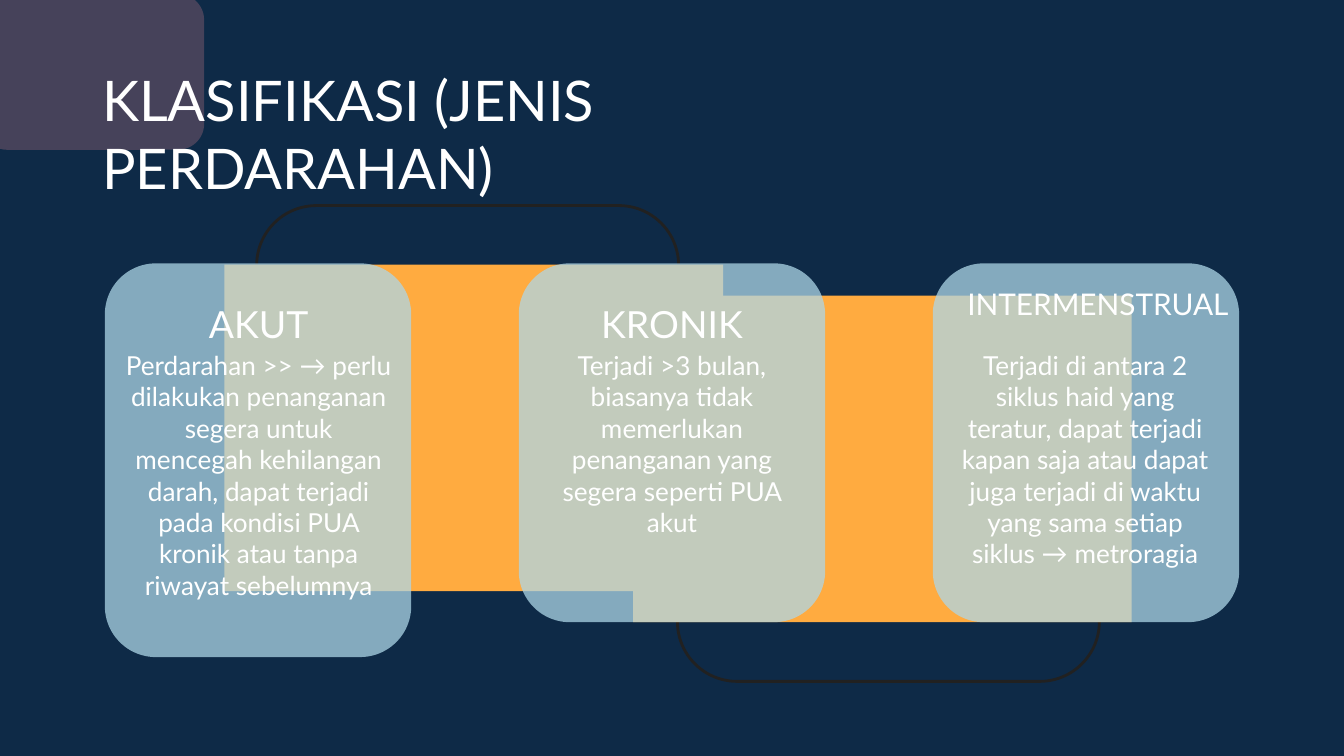
from dataclasses import dataclass

from lxml.etree import SubElement
from pptx import Presentation
from pptx.dml.color import RGBColor
from pptx.enum.shapes import MSO_SHAPE as Kind
from pptx.enum.text import MSO_ANCHOR as Anchor, MSO_AUTO_SIZE as Fit, PP_ALIGN as Align
from pptx.oxml.ns import qn
from pptx.shapes.autoshape import Shape
from pptx.slide import Slide
from pptx.text.text import TextFrame
from pptx.util import Emu, Pt

PX = 4572  # 200 px to the inch


@dataclass(frozen=True)
class Theme:
    font: str = "Lato"
    back: str = "0E2A47"
    text: str = "FFFFFF"
    corner: str = "EE8C94"
    band: str = "FFAB40"
    loop: str = "212121"
    card: str = "AED7E8"
    title: int = 30
    head: int = 20
    small: int = 16
    body: int = 14


@dataclass(frozen=True)
class Box:
    x: int
    y: int
    w: int
    h: int

    def emu(self) -> list[Emu]:
        return [Emu(n * PX) for n in (self.x, self.y, self.w, self.h)]


@dataclass(frozen=True)
class Link:
    loop: Box
    band: Box
    turn: int


@dataclass(frozen=True)
class Card:
    high: int
    head: str
    size: int
    top: Box
    body: str
    area: Box


THEME = Theme()
INSET = 20
CARD_X, CARD_Y, CARD_W, STEP = 156, 392, 456, 616
LINKS = [
    Link(Box(1008, 480, 628, 534), Box(942, 440, 742, 486), 180),
    Link(Box(382, 306, 628, 534), Box(334, 394, 742, 486), 0),
]
CARDS = [
    Card(586, "AKUT", THEME.head, Box(214, 409, 342, 126),
         "Perdarahan >> → perlu dilakukan penanganan segera untuk mencegah kehilangan "
         "darah, dapat terjadi pada kondisi PUA kronik atau tanpa riwayat sebelumnya",
         Box(164, 500, 442, 424)),
    Card(534, "KRONIK", THEME.head, Box(801, 409, 398, 126),
         "Terjadi >3 bulan, biasanya tidak memerlukan penanganan yang segera seperti PUA akut",
         Box(781, 500, 438, 338)),
    Card(534, "INTERMENSTRUAL", THEME.small, Box(1410, 355, 448, 144),
         "Terjadi di antara 2 siklus haid yang teratur, dapat terjadi kapan saja atau "
         "dapat juga terjadi di waktu yang sama setiap siklus → metroragia",
         Box(1400, 500, 430, 380)),
]


def rgb(code: str) -> RGBColor:
    return RGBColor.from_string(code)


def block(slide: Slide, kind: Kind, box: Box, fill: str = "", line: str = "",
          alpha: int = 100, turn: int = 0) -> Shape:
    """Draw a flat shape; alpha is its opacity in percent."""
    shape = slide.shapes.add_shape(kind, *box.emu())
    shape.shadow.inherit = False
    shape.rotation = turn
    if fill:
        shape.fill.solid()
        shape.fill.fore_color.rgb = rgb(fill)
        if alpha < 100:
            tint = shape.element.spPr.find(f"{qn('a:solidFill')}/{qn('a:srgbClr')}")
            SubElement(tint, qn("a:alpha")).set("val", str(alpha * 1000))
    else:
        shape.fill.background()
    if line:
        shape.line.color.rgb = rgb(line)
        shape.line.width = Pt(1.5)
    else:
        shape.line.fill.background()
    return shape


def write(frame: TextFrame, text: str, size: int, align: Align = Align.CENTER,
          anchor: Anchor = Anchor.TOP) -> None:
    frame.word_wrap = True
    frame.auto_size = Fit.NONE
    frame.vertical_anchor = anchor
    frame.margin_left = frame.margin_right = Emu(INSET * PX)
    frame.margin_top = frame.margin_bottom = Emu(INSET * PX)
    para = frame.paragraphs[0]
    para.alignment = align
    run = para.add_run()
    run.text = text
    run.font.name = THEME.font
    run.font.size = Pt(size)
    run.font.color.rgb = rgb(THEME.text)


def label(slide: Slide, box: Box, text: str, size: int,
          anchor: Anchor = Anchor.TOP) -> None:
    frame = slide.shapes.add_textbox(*box.emu()).text_frame
    write(frame, text, size, anchor=anchor)


def main() -> None:
    deck = Presentation()
    deck.slide_width, deck.slide_height = Emu(2000 * PX), Emu(1125 * PX)
    slide = deck.slides.add_slide(deck.slide_layouts[5])
    slide.background.fill.solid()
    slide.background.fill.fore_color.rgb = rgb(THEME.back)

    title = slide.shapes.title
    title.left, title.top, title.width, title.height = Box(132, 78, 1052, 164).emu()
    write(title.text_frame, "KLASIFIKASI (JENIS PERDARAHAN)", THEME.title, Align.LEFT)
    corner = block(slide, Kind.ROUNDED_RECTANGLE, Box(-28, -9, 332, 232),
                   THEME.corner, alpha=25)
    title.element.addprevious(corner.element)  # the corner lies behind the title

    for link in LINKS:
        block(slide, Kind.ROUNDED_RECTANGLE, link.loop, line=THEME.loop, turn=link.turn)
        block(slide, Kind.RECTANGLE, link.band, THEME.band, turn=link.turn)
    for i, card in enumerate(CARDS):
        box = Box(CARD_X + i * STEP, CARD_Y, CARD_W, card.high)
        block(slide, Kind.ROUNDED_RECTANGLE, box, THEME.card, alpha=74)
        label(slide, card.top, card.head, card.size, Anchor.BOTTOM)
        label(slide, card.area, card.body, THEME.body)

    deck.save("out.pptx")


if __name__ == "__main__":
    main()
